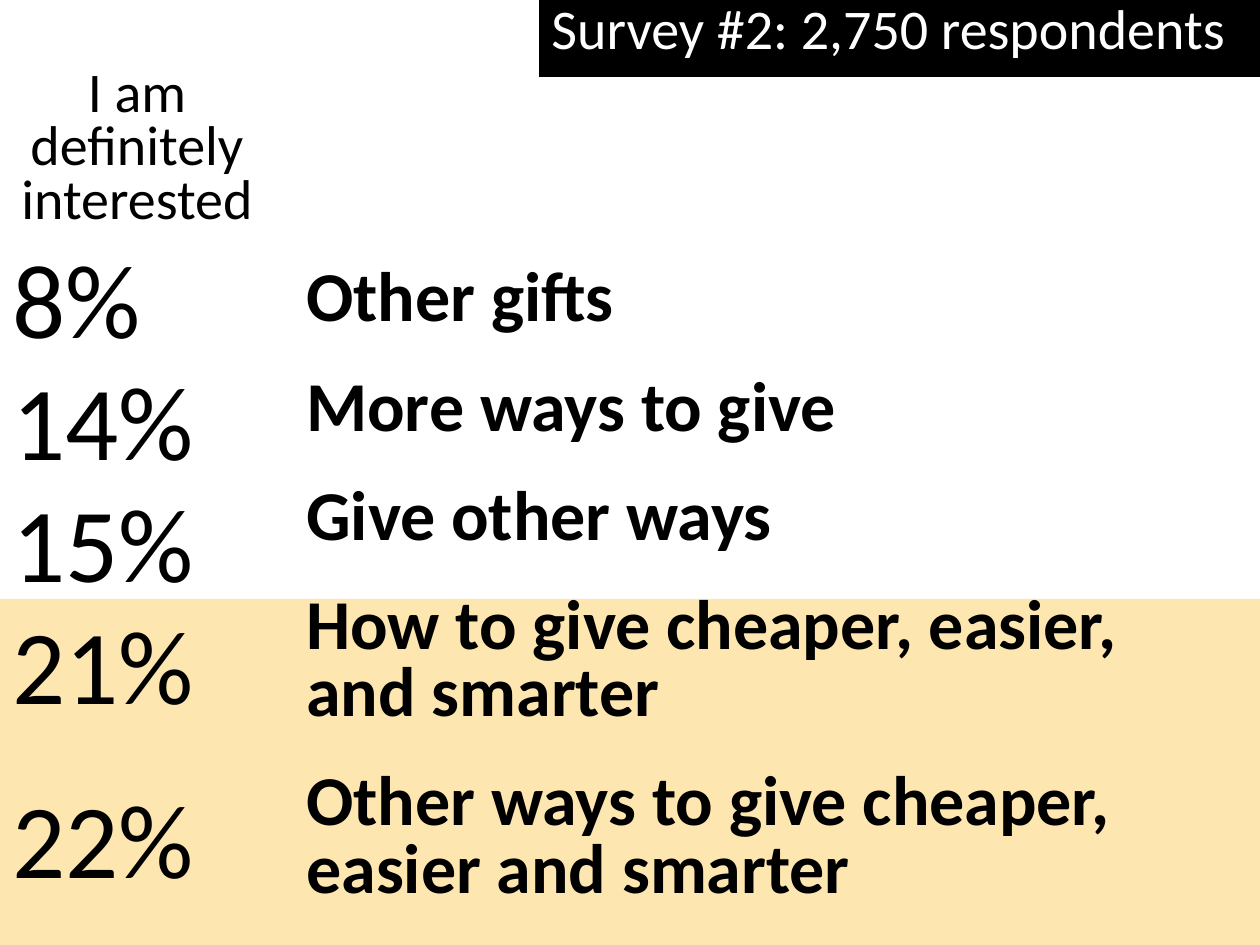
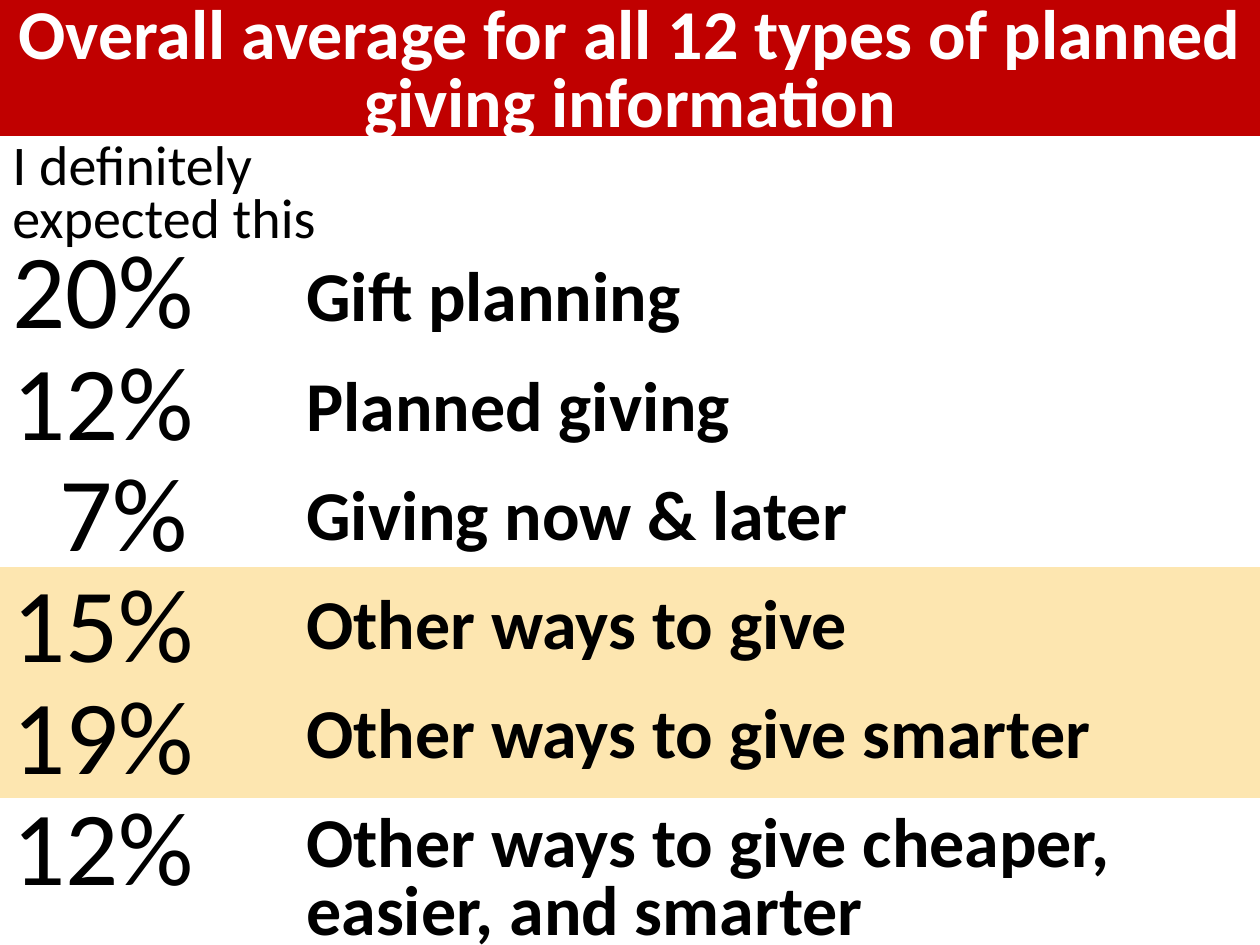
from pptx import Presentation
from pptx.dml.color import RGBColor
from pptx.enum.shapes import MSO_SHAPE as Shape
from pptx.enum.text import MSO_ANCHOR as Anchor, PP_ALIGN as Align
from pptx.oxml.ns import qn
from pptx.util import Emu, Pt
from lxml.etree import SubElement

PX = 914400 / 126
SLIDE_W, SLIDE_H = 1260, 945
FONT = "Calibri"
LABEL_SIZE, ANSWER_SIZE, SHARE_SIZE = 32, 40, 60
COLORS = {
    "text": "000000",
    "inverse": "FFFFFF",
    "highlight": "FDCE62",
    "survey": "000000",
    "average": "C00000",
}


def px(length):
    return Emu(round(length * PX))


def box(left, top, width, height):
    return px(left), px(top), px(width), px(height)


def rgb(color):
    return RGBColor.from_string(COLORS[color])


def write(frame, lines, size, color="text", bold=False, align=Align.LEFT, after=24):
    frame.word_wrap = True
    frame.vertical_anchor = Anchor.TOP
    for index, line in enumerate(lines):
        paragraph = frame.paragraphs[0] if index == 0 else frame.add_paragraph()
        paragraph.alignment = align
        paragraph.line_spacing = 0.8
        paragraph.space_after = Pt(after)
        run = paragraph.add_run()
        run.text = line
        run.font.name = FONT
        run.font.size = Pt(size)
        run.font.bold = bold
        run.font.color.rgb = rgb(color)


def add_band(slide, place, color):
    band = slide.shapes.add_shape(Shape.RECTANGLE, *box(*place))
    band.shadow.inherit = False
    band.fill.solid()
    band.fill.fore_color.rgb = rgb(color)
    band.line.fill.background()
    return band


def add_highlight(slide, top, height):
    highlight = add_band(slide, (0, top, SLIDE_W, height), "highlight")
    tint = highlight.fill._xPr.find(qn("a:solidFill"))[0]
    SubElement(tint, qn("a:alpha")).set("val", "50000")


def add_header(slide, place, color, title, size, **style):
    header = add_band(slide, place, color)
    write(header.text_frame, [title], size, "inverse", **style)


def add_text(slide, place, lines, size, **style):
    frame = slide.shapes.add_textbox(*box(*place)).text_frame
    write(frame, lines, size, **style)
    return frame.paragraphs


def add_answers(slide, height, answers):
    add_text(slide, (294, 262, 955, height), answers, ANSWER_SIZE, bold=True)


def build_interest(slide):
    add_highlight(slide, 599, 346)
    add_answers(slide, 662, [
        "Other gifts",
        "More ways to give",
        "Give other ways",
        "How to give cheaper, easier, and smarter",
        "Other ways to give cheaper, easier and smarter",
    ])
    add_text(slide, (1, 63, 272, 152), ["I am definitely interested"],
             LABEL_SIZE, align=Align.CENTER)
    shares = add_text(slide, (0, 252, 305, 599),
                      ["8%", "14%", "15%", "21%", "22%"], SHARE_SIZE, after=12)
    shares[-1].space_before = Pt(30)
    add_header(slide, (539, 0, 724, 77), "survey",
               "Survey #2: 2,750 respondents", LABEL_SIZE)


def build_expectation(slide):
    add_highlight(slide, 567, 231)
    add_answers(slide, 599, [
        "Gift planning",
        "Planned giving",
        "Giving now & later",
        "Other ways to give",
        "Other ways to give smarter",
        "Other ways to give cheaper, easier, and smarter",
    ])
    add_text(slide, (0, 136, 335, 116), ["I definitely expected this"], LABEL_SIZE)
    shares = add_text(slide, (0, 242, 262, 599),
                      ["20%", "12%", "7%", "15%", "19%", "12%"], SHARE_SIZE, after=6)
    shares[2]._p.get_or_add_pPr().set("marL", str(px(47)))
    add_header(slide, (0, 0, SLIDE_W, 136), "average",
               "Overall average for all 12 types of planned giving information",
               ANSWER_SIZE, bold=True, align=Align.CENTER)


def main():
    deck = Presentation()
    deck.slide_width, deck.slide_height = px(SLIDE_W), px(SLIDE_H)
    blank = deck.slide_layouts[6]
    for build in (build_interest, build_expectation):
        build(deck.slides.add_slide(blank))
    deck.save("out.pptx")


if __name__ == "__main__":
    main()
